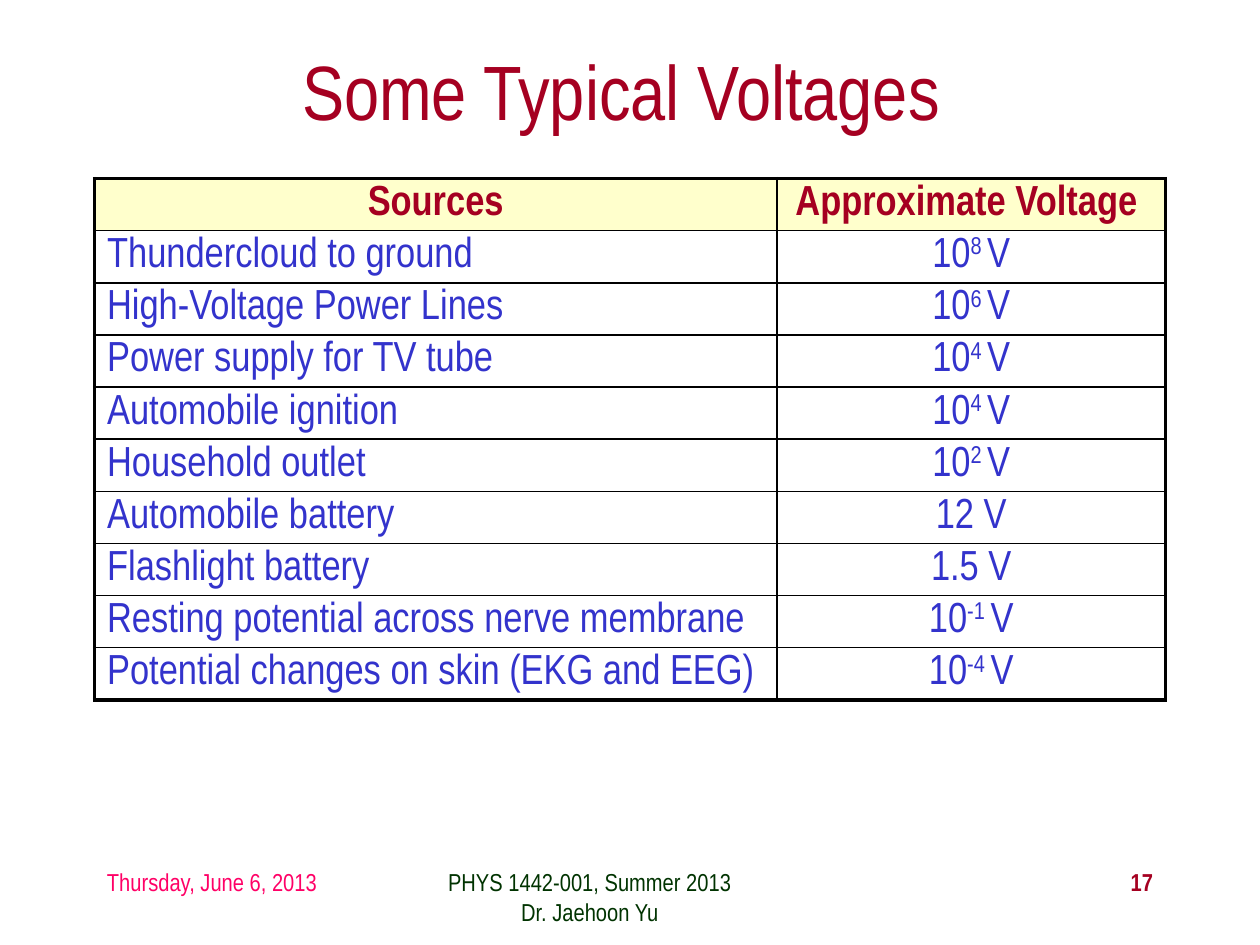
from lxml.etree import SubElement
from pptx import Presentation
from pptx.dml.color import RGBColor
from pptx.enum.text import MSO_ANCHOR, PP_ALIGN
from pptx.oxml.ns import qn
from pptx.util import Pt

FONT = "Arial Narrow"
RED, BLUE, PINK, GREEN = "A50021", "3333CC", "FF0066", "003300"
CREAM, WHITE, BLACK = "FFFFCC", "FFFFFF", "000000"
LEFT, CENTER, RIGHT = PP_ALIGN.LEFT, PP_ALIGN.CENTER, PP_ALIGN.RIGHT

HEADER = ("Sources", "Approximate Voltage ")
# Source, then the voltage as (base, exponent, unit) or as plain text
VOLTAGES = [
    ("Thundercloud to ground", ("10", "8 ", "V")),
    ("High-Voltage Power Lines", ("10", "6 ", "V")),
    ("Power supply for TV tube", ("10", "4 ", "V")),
    ("Automobile ignition", ("10", "4 ", "V")),
    ("Household outlet", ("10", "2 ", "V")),
    ("Automobile battery", ("12 V",)),
    ("Flashlight battery", ("1.5 V",)),
    ("Resting potential across nerve membrane", ("10", "-1 ", "V")),
    ("Potential changes on skin (EKG and EEG)", ("10", "-4 ", "V")),
]


def rgb(color):
    return RGBColor.from_string(color)


class SlideBuilder:
    def __init__(self, slide):
        self.slide = slide

    def style(self, p, size, color, align, bold=False):
        p.alignment = align
        for r in p.runs:
            r.font.name, r.font.size, r.font.bold = FONT, Pt(size), bold
            r.font.color.rgb = rgb(color)

    def text(self, box, lines, size, color, align, bold=False,
             anchor=MSO_ANCHOR.TOP):
        sp = self.slide.shapes.add_textbox(*map(Pt, box))
        tf = sp.text_frame
        tf.word_wrap, tf.vertical_anchor = True, anchor
        tf.text = "\n".join(lines)
        for p in tf.paragraphs:
            self.style(p, size, color, align, bold)
        return tf

    def borders(self, cell, widths):
        """Draw the left, right, top and bottom borders, in that order."""
        tcPr = cell._tc.get_or_add_tcPr()
        for i, (side, width) in enumerate(zip("LRTB", widths)):
            ln = SubElement(tcPr, qn(f"a:ln{side}"), w=str(Pt(width)))
            fill = SubElement(ln, qn("a:solidFill"))
            SubElement(fill, qn("a:srgbClr"), val=BLACK)
            tcPr.insert(i, ln)

    def cell(self, cell, parts, color, align, fill, bold=False):
        cell.margin_top = cell.margin_bottom = 0
        cell.vertical_anchor = MSO_ANCHOR.MIDDLE
        cell.fill.solid()
        cell.fill.fore_color.rgb = rgb(fill)
        p = cell.text_frame.paragraphs[0]
        for i, part in enumerate(parts):
            r = p.add_run()
            r.text = part
            if i == 1:
                r._r.get_or_add_rPr().set("baseline", "30000")
        self.style(p, 24, color, align, bold)

    def table(self, left, top, widths, row_height, header, rows):
        n = len(rows) + 1
        table = self.slide.shapes.add_table(
            n, len(widths), Pt(left), Pt(top),
            Pt(sum(widths)), Pt(row_height * n)).table
        table.first_row = table.horz_banding = False
        for column, width in zip(table.columns, widths):
            column.width = Pt(width)
        for row in table.rows:
            row.height = Pt(row_height)
        for j, title in enumerate(header):
            self.cell(table.cell(0, j), (title,), RED, CENTER, CREAM, True)
        for i, (source, voltage) in enumerate(rows, 1):
            self.cell(table.cell(i, 0), (source,), BLUE, LEFT, WHITE)
            self.cell(table.cell(i, 1), voltage, BLUE, CENTER, WHITE)
        for i in range(n):
            for j in range(len(widths)):
                outer = (j == 0, j == len(widths) - 1, i == 0, i == n - 1)
                self.borders(table.cell(i, j),
                             [2.25 if edge else 1 for edge in outer])


def main():
    prs = Presentation()
    prs.slide_width, prs.slide_height = Pt(720), Pt(540)
    s = SlideBuilder(prs.slides.add_slide(prs.slide_layouts[6]))

    s.text((54, 492, 168, 36), ["Thursday, June 6, 2013"], 14, PINK, LEFT)
    course = s.text((246, 492, 228, 36),
                    ["PHYS 1442-001, Summer 2013", "Dr. Jaehoon Yu"],
                    14, GREEN, CENTER)
    # The course line sits left of the lecturer's name
    course.paragraphs[0]._p.get_or_add_pPr().set("marR", str(Pt(46)))
    s.text((516, 492, 150, 36), ["17"], 14, RED, RIGHT, bold=True)
    s.text((54, 24, 612, 54), ["Some Typical Voltages "], 44, RED, CENTER,
           anchor=MSO_ANCHOR.MIDDLE)
    s.table(54, 102, (390, 222), 29.8, HEADER, VOLTAGES)
    prs.save("out.pptx")


if __name__ == "__main__":
    main()
